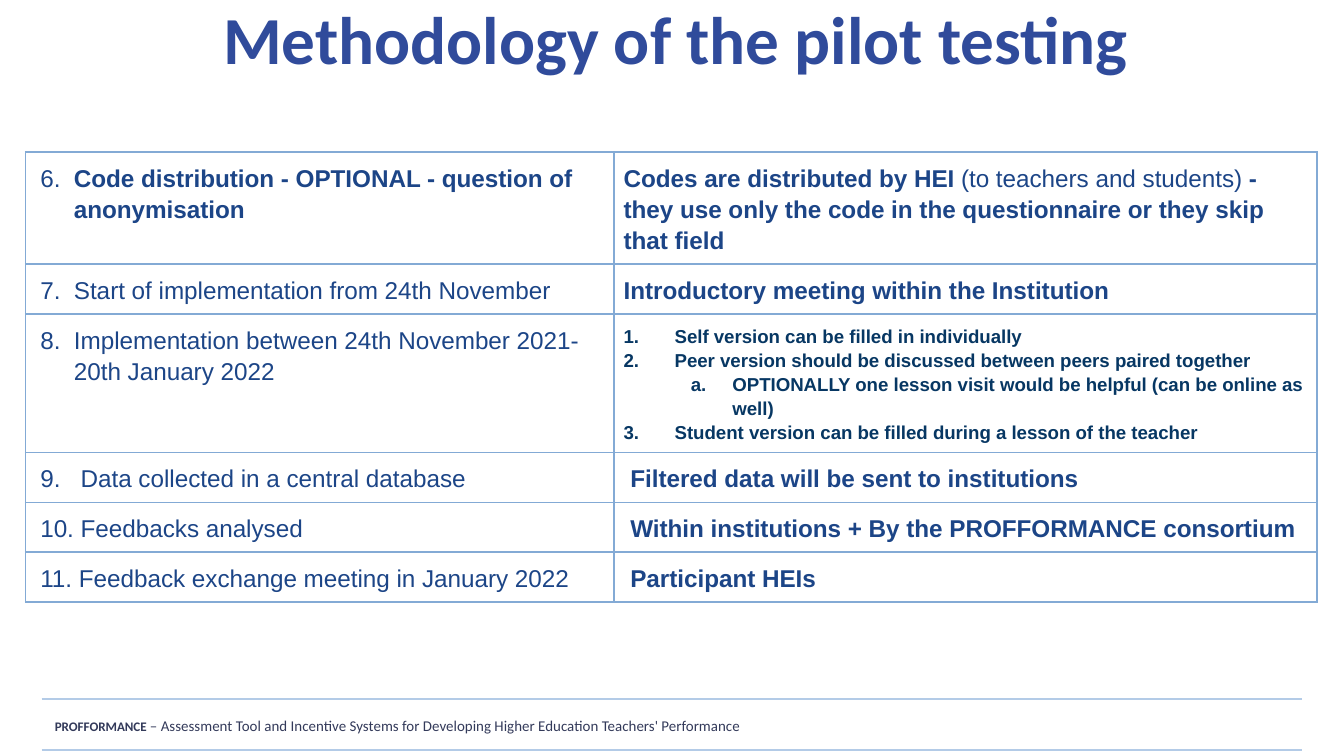
from dataclasses import dataclass

from lxml import etree
from pptx import Presentation
from pptx import util as u
from pptx.dml.color import RGBColor
from pptx.enum import shapes, text
from pptx.oxml import ns


@dataclass(frozen=True)
class Theme:
    heading_font: str = "Calibri"
    body_font: str = "Arial"
    heading: str = "304B9B"
    body: str = "1C4587"
    steps: str = "073763"
    footer: str = "333A5A"
    rule: str = "B3CBE7"
    border: str = "83AAD5"
    heading_size: float = 36
    body_size: float = 13
    steps_size: float = 10
    footer_size: float = 8
    project_size: float = 7


@dataclass(frozen=True)
class Span:
    words: str
    bold: bool = False


@dataclass(frozen=True)
class Line:
    spans: tuple[Span, ...]
    margin: float = 0
    indent: float = 0
    numbering: str = ""
    level: int = 0


@dataclass(frozen=True)
class Row:
    height: float
    activity: Line
    details: tuple[Line, ...]


THEME = Theme()


def activity(*spans: Span, margin: float = 0.29) -> Line:
    return Line(spans, margin, 0.04 - margin)


def detail(words: str, margin: float = 0) -> Line:
    return Line((Span(words, True),), margin)


def step(words: str) -> Line:
    return Line((Span(words, True),), 0.38, -0.38, "arabicPeriod")


def substep(words: str) -> Line:
    return Line((Span(words, True),), 0.81, -0.31, "alphaLcPeriod", 1)


ROWS = (
    Row(0.57,
        activity(Span("6.\t"), Span("Code distribution - OPTIONAL - question of anonymisation", True)),
        (Line((Span("Codes are distributed by HEI ", True),
               Span("(to teachers and students)"),
               Span(" - they use only the code in the questionnaire or they skip that field", True))),)),
    Row(0.36,
        activity(Span("7.\tStart of implementation from 24th November")),
        (detail("Introductory meeting within the Institution"),)),
    Row(0.69,
        activity(Span("8.\tImplementation between 24th November 2021- 20th January 2022")),
        (step("Self version can be filled in individually"),
         step("Peer version should be discussed between peers paired together"),
         substep("OPTIONALLY one lesson visit would be helpful (can be online as well)"),
         step("Student version can be filled during a lesson of the teacher"))),
    Row(0.31,
        activity(Span("9.\tData collected in a central database"), margin=0.34),
        (detail("Filtered data will be sent to institutions", 0.05),)),
    Row(0.29,
        activity(Span("10. Feedbacks analysed"), margin=0.34),
        (detail("Within institutions + By the PROFFORMANCE consortium", 0.05),)),
    Row(0.29,
        activity(Span("11. Feedback exchange meeting in January 2022"), margin=0.34),
        (detail("Participant HEIs", 0.05),)),
)


def style(font, family: str, size: float, color: str) -> None:
    font.name = family
    font.size = u.Pt(size)
    font.color.rgb = RGBColor.from_string(color)


def add_color(parent, tag: str, color: str) -> None:
    holder = etree.SubElement(parent, ns.qn(tag))
    etree.SubElement(holder, ns.qn("a:srgbClr"), val=color)


def set_borders(cell) -> None:
    properties = cell._tc.get_or_add_tcPr()
    for position, side in enumerate("LRTB"):
        edge = etree.Element(ns.qn(f"a:ln{side}"), w=str(u.Pt(1)))
        add_color(edge, "a:solidFill", THEME.border)
        properties.insert(position, edge)


def write_line(paragraph, line: Line) -> None:
    paragraph.line_spacing = 1.15
    paragraph.level = line.level
    properties = paragraph._p.get_or_add_pPr()
    properties.set("marL", str(u.Inches(line.margin)))
    properties.set("indent", str(u.Inches(line.indent)))
    size, color = THEME.body_size, THEME.body
    if line.numbering:
        size, color = THEME.steps_size, THEME.steps
        add_color(properties, "a:buClr", color)
        etree.SubElement(properties, ns.qn("a:buFont"), typeface=THEME.body_font)
        etree.SubElement(properties, ns.qn("a:buAutoNum"), type=line.numbering)
    style(paragraph.font, THEME.body_font, size, color)
    for span in line.spans:
        run = paragraph.add_run()
        run.text = span.words
        run.font.bold = span.bold


def fill_cell(cell, lines: tuple[Line, ...]) -> None:
    cell.fill.background()
    set_borders(cell)
    cell.margin_left = cell.margin_right = u.Inches(0.07)
    cell.margin_top = cell.margin_bottom = u.Inches(0.07)
    frame = cell.text_frame
    for number, line in enumerate(lines):
        write_line(frame.add_paragraph() if number else frame.paragraphs[0], line)


def add_schedule(slide) -> None:
    widths = (4.38, 5.23)
    schedule = slide.shapes.add_table(
        len(ROWS), len(widths), u.Inches(0.19), u.Inches(1.13),
        u.Inches(sum(widths)), u.Inches(sum(row.height for row in ROWS))).table
    schedule.first_row = schedule.horz_banding = False
    for column, width in zip(schedule.columns, widths):
        column.width = u.Inches(width)
    for index, row in enumerate(ROWS):
        schedule.rows[index].height = u.Inches(row.height)
        fill_cell(schedule.cell(index, 0), (row.activity,))
        fill_cell(schedule.cell(index, 1), row.details)


def set_insets(frame) -> None:
    frame.margin_left = frame.margin_right = u.Inches(0.1)
    frame.margin_top = frame.margin_bottom = u.Inches(0.1)
    frame.word_wrap = True
    frame.auto_size = text.MSO_AUTO_SIZE.NONE


def add_title(slide) -> None:
    title = slide.shapes.title
    title.left, title.top = u.Inches(1.56), u.Inches(0)
    title.width, title.height = u.Inches(7.9), u.Inches(0.56)
    frame = title.text_frame
    set_insets(frame)
    frame.vertical_anchor = text.MSO_ANCHOR.MIDDLE
    frame.text = "Methodology of the pilot testing"
    heading = frame.paragraphs[0]
    heading.alignment = text.PP_ALIGN.LEFT
    style(heading.font, THEME.heading_font, THEME.heading_size, THEME.heading)
    heading.font.bold = True


def add_rule(slide, top: float) -> None:
    rule = slide.shapes.add_connector(
        shapes.MSO_CONNECTOR.STRAIGHT,
        u.Inches(0.31), u.Inches(top), u.Inches(9.69), u.Inches(top))
    rule.line.color.rgb = RGBColor.from_string(THEME.rule)
    rule.line.width = u.Pt(0.75)
    etree.SubElement(rule._element.spPr, ns.qn("a:effectLst"))


def add_footer(slide) -> None:
    for top in (5.2, 5.58):
        add_rule(slide, top)
    footer = slide.shapes.add_textbox(
        u.Inches(0.31), u.Inches(5.23), u.Inches(6.74), u.Inches(0.33))
    set_insets(footer.text_frame)
    credit = footer.text_frame.paragraphs[0]
    style(credit.font, THEME.heading_font, THEME.footer_size, THEME.footer)
    project = credit.add_run()
    project.text = "PROFFORMANCE"
    project.font.size = u.Pt(THEME.project_size)
    project.font.bold = True
    credit.add_run().text = (" – Assessment Tool and Incentive Systems for Developing "
                             "Higher Education Teachers' Performance")


def main() -> None:
    deck = Presentation()
    deck.slide_width = u.Inches(10)
    deck.slide_height = deck.slide_width * 9 // 16
    slide = deck.slides.add_slide(deck.slide_layouts[5])
    add_footer(slide)
    add_title(slide)
    add_schedule(slide)
    deck.save("out.pptx")


if __name__ == "__main__":
    main()
